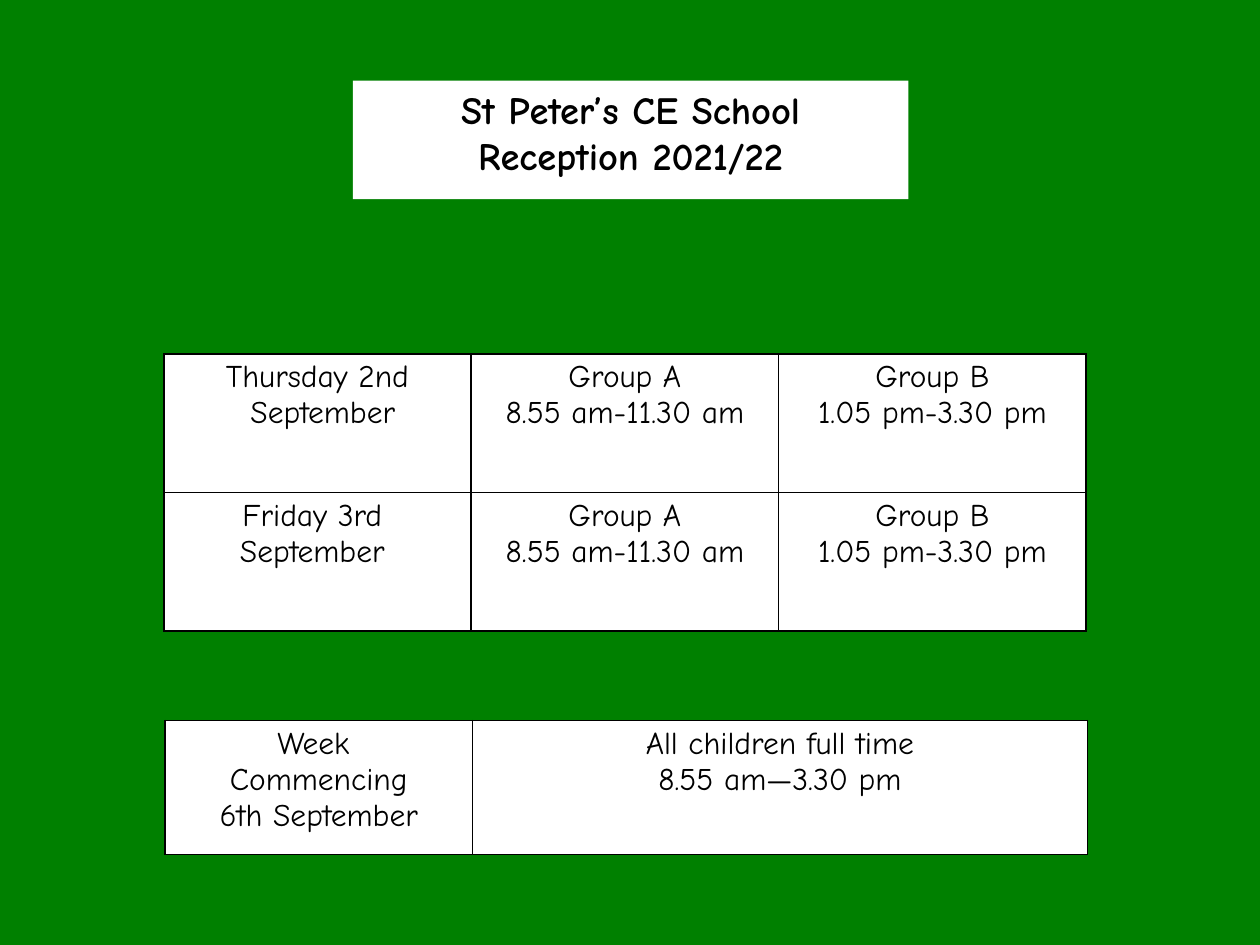
from pptx import Presentation
from pptx.dml.color import RGBColor
from pptx.enum.text import MSO_ANCHOR, MSO_AUTO_SIZE, PP_ALIGN
from pptx.oxml import parse_xml
from pptx.oxml.ns import nsdecls
from pptx.util import Inches, Pt

COLORS = {"background": "008000", "panel": "FFFFFF", "ink": "000000"}
FONT = "Comic Neue"
INSET = 0.04
COLUMN = 2.44

TITLE = "St Peter’s CE School\nReception 2021/22"
GROUP_A = "Group A\n8.55 am-11.30 am"
GROUP_B = "Group B\n1.05 pm-3.30 pm"
TABLES = [
    {"left": 1.3, "top": 2.81, "row_height": 1.1, "columns": [COLUMN] * 3,
     "rows": [["Thursday 2nd\n September", GROUP_A, GROUP_B],
              ["Friday 3rd \nSeptember ", GROUP_A, GROUP_B]]},
    {"left": 1.31, "top": 5.72, "row_height": 1.06, "columns": [COLUMN, 2 * COLUMN],
     "rows": [["Week \nCommencing\n6th September",
               "All children full time\n8.55 am—3.30 pm"]]},
]


def color(name):
    return RGBColor.from_string(COLORS[name])


def paint(target, name):
    target.fill.solid()
    target.fill.fore_color.rgb = color(name)


def write(holder, text, size, bold=False):
    """Fill a cell or text frame with centred text, anchored at the top."""
    frame = holder.text_frame
    holder_format = frame if hasattr(frame, "margin_left") and not hasattr(holder, "margin_left") else holder
    for side in ("left", "right", "top", "bottom"):
        setattr(holder_format, f"margin_{side}", Inches(INSET))
    holder_format.vertical_anchor = MSO_ANCHOR.TOP
    frame.text = text
    for para in frame.paragraphs:
        para.alignment = PP_ALIGN.CENTER
        for span in para.runs:
            span.font.name = FONT
            span.font.size = Pt(size)
            span.font.bold = bold
            span.font.color.rgb = color("ink")


def add_borders(cell):
    properties = cell._tc.get_or_add_tcPr()
    for position, side in enumerate(("lnL", "lnR", "lnT", "lnB")):
        properties.insert(position, parse_xml(
            f'<a:{side} {nsdecls("a")} w="{Pt(1)}"><a:solidFill>'
            f'<a:srgbClr val="{COLORS["ink"]}"/></a:solidFill></a:{side}>'))


def add_timetable(slide, left, top, row_height, columns, rows):
    table = slide.shapes.add_table(
        len(rows), len(columns), Inches(left), Inches(top),
        Inches(sum(columns)), Inches(row_height * len(rows))).table
    table.first_row = table.horz_banding = False
    for column, width in zip(table.columns, columns):
        column.width = Inches(width)
    for row, texts in zip(table.rows, rows):
        row.height = Inches(row_height)
        for cell, text in zip(row.cells, texts):
            write(cell, text, 18)
            paint(cell, "panel")
            add_borders(cell)


def main():
    deck = Presentation()
    deck.slide_width, deck.slide_height = Inches(10), Inches(7.5)
    slide = deck.slides.add_slide(deck.slide_layouts[5])
    paint(slide.background, "background")

    # School heading
    title = slide.shapes.title
    title.left, title.top = Inches(2.8), Inches(0.64)
    title.width, title.height = Inches(4.41), Inches(0.94)
    paint(title, "panel")
    write(title, TITLE, 22, bold=True)
    title.text_frame.word_wrap = True
    title.text_frame.auto_size = MSO_AUTO_SIZE.NONE

    # Starting days and the first full week
    for timetable in TABLES:
        add_timetable(slide, **timetable)

    deck.save("out.pptx")


if __name__ == "__main__":
    main()
